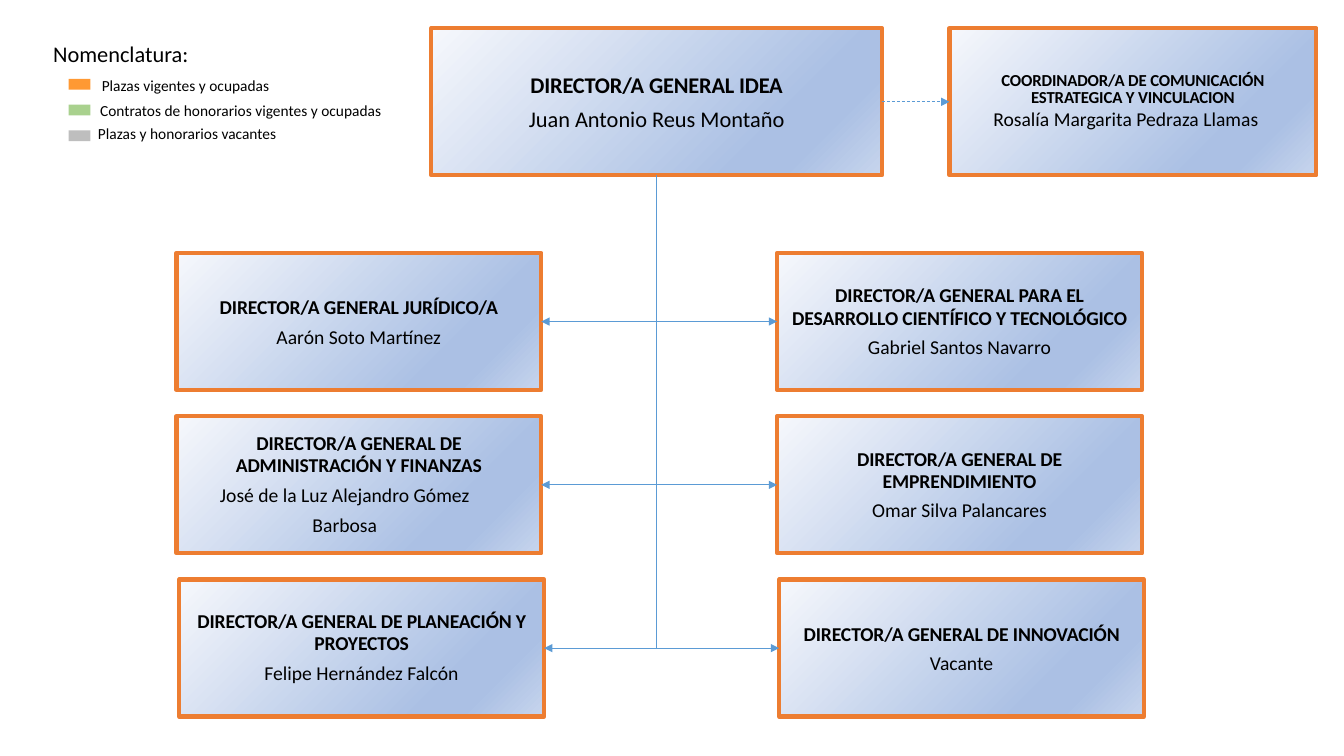
from dataclasses import dataclass
from typing import Any

from lxml.etree import SubElement as Sub
from pptx import Presentation
from pptx.dml.color import RGBColor as Rgb
from pptx.enum.dml import MSO_LINE as Dash
from pptx.enum.shapes import MSO_CONNECTOR as Link, MSO_SHAPE as Form
from pptx.enum.text import MSO_ANCHOR as Anchor, PP_ALIGN as Align
from pptx.oxml import parse_xml as to_xml
from pptx.oxml.ns import nsdecls, qn
from pptx.util import Pt

HUES = {
    "ink": "000000",
    "edge": "ED7D31",
    "link": "5B9BD5",
    "pale": "F6F8FC",
    "blue": "ABC0E4",
    "soft": "C7D5ED",
    "post": "FF9933",
    "fee": "A9D18E",
    "free": "BEBEBE",
}
STOPS = [(0, "pale"), (74, "blue"), (83, "blue"), (100, "soft")]
FONT = "Calibri"


@dataclass(frozen=True)
class Line:
    text: str
    size: float = 14
    bold: bool = False
    gap: float = 0
    lead: Any = None
    pad: float = 0


@dataclass(frozen=True)
class Box:
    left: float
    top: float
    width: float
    height: float
    lines: tuple[Line, ...]


@dataclass(frozen=True)
class Key:
    hue: str
    text: str
    left: float
    top: float
    width: float


def hue(name: str) -> Rgb:
    return Rgb.from_string(HUES[name])


def write(para: Any, line: Line) -> None:
    para.space_before = Pt(line.gap)
    if line.lead:
        para.line_spacing = line.lead
    if line.pad:
        props = para._p.get_or_add_pPr()
        props.set("marL", str(Pt(line.pad)))
        props.set("marR", str(Pt(line.pad)))
    run = para.add_run()
    run.text = line.text
    font = run.font
    font.name, font.size, font.bold = FONT, Pt(line.size), line.bold
    font.color.rgb = hue("ink")
    if line.bold:
        font._element.set("spc", "-10")


def draw_box(shapes: Any, box: Box) -> Any:
    rect = shapes.add_shape(Form.RECTANGLE, Pt(box.left), Pt(box.top),
                            Pt(box.width), Pt(box.height))
    rect.shadow.inherit = False
    stops = "".join(f'<a:gs pos="{at * 1000}"><a:srgbClr val="{HUES[name]}"/></a:gs>'
                    for at, name in STOPS)
    blend = to_xml(f'<a:gradFill {nsdecls("a")} rotWithShape="1"><a:gsLst>{stops}'
                   '</a:gsLst><a:lin ang="2700000" scaled="0"/></a:gradFill>')
    rect._element.spPr.insert(2, blend)
    rect.line.color.rgb = hue("edge")
    rect.line.width = Pt(3)
    frame = rect.text_frame
    frame.word_wrap = True
    frame.vertical_anchor = Anchor.MIDDLE
    for i, line in enumerate(box.lines):
        para = frame.add_paragraph() if i else frame.paragraphs[0]
        para.alignment = Align.CENTER
        write(para, line)
    return rect


def draw_note(shapes: Any, line: Line, left: float, top: float,
              width: float, height: float) -> None:
    frame = shapes.add_textbox(Pt(left), Pt(top), Pt(width), Pt(height)).text_frame
    frame.word_wrap = True
    frame.margin_left = frame.margin_right = frame.margin_bottom = 0
    frame.margin_top = Pt(1)
    write(frame.paragraphs[0], line)


def draw_key(shapes: Any, key: Key, top: float) -> None:
    chip = shapes.add_shape(Form.RECTANGLE, Pt(49), Pt(top), Pt(15.5), Pt(7.7))
    chip.shadow.inherit = False
    chip.fill.solid()
    chip.fill.fore_color.rgb = hue(key.hue)
    chip.line.fill.background()
    draw_note(shapes, Line(key.text, 11, gap=1.1), key.left, key.top, key.width, 14.4)


def draw_link(shapes: Any, x1: float, y1: float, x2: float, y2: float,
              heads: tuple[str, ...] = (), dash: bool = False) -> Any:
    link = shapes.add_connector(Link.STRAIGHT, Pt(x1), Pt(y1), Pt(x2), Pt(y2))
    link.line.color.rgb = hue("link")
    link.line.width = Pt(0.5)
    if dash:
        link.line.dash_style = Dash.DASH
    stroke = link.line._get_or_add_ln()
    for head in heads:
        Sub(stroke, qn(head)).set("type", "triangle")
    Sub(link._element.spPr, qn("a:effectLst"))
    return link


def join(shapes: Any, start: Any, end: Any, heads: tuple[str, ...],
         dash: bool = False) -> None:
    link = draw_link(shapes, 0, 0, 0, 0, heads, dash)
    link.begin_connect(start, 3)
    link.end_connect(end, 1)


def head(text: str, gap: float, lead: float = 0, pad: float = 0) -> Line:
    return Line(text, 14, True, gap, Pt(lead) if lead else None, pad)


BOSS = Box(308.16, 20.16, 321.84, 105.12, (
    Line("DIRECTOR/A GENERAL IDEA", 16, True, 6.4),
    Line("Juan Antonio Reus Montaño", 16, gap=0.1, lead=1.25)))
AIDE = Box(678.24, 20.16, 262.08, 105.12, (
    Line("COORDINADOR/A DE COMUNICACIÓN ESTRATEGICA Y VINCULACION",
         12, True, 2.5, Pt(11.9), 10),
    Line("Rosalía Margarita Pedraza Llamas", gap=0.6, lead=Pt(16.6))))

ROWS = [
    (126, 555.12,
     (head("DIRECTOR/A GENERAL JURÍDICO/A", 5.2),
      Line("Aarón Soto Martínez", gap=4.2)),
     (head("DIRECTOR/A GENERAL PARA EL", 1.1, 15.9),
      head("DESARROLLO CIENTÍFICO Y TECNOLÓGICO", 0, 15.9),
      Line("Gabriel Santos Navarro", lead=1.25))),
    (126, 555.12,
     (head("DIRECTOR/A GENERAL DE ADMINISTRACIÓN Y FINANZAS", 2.9, 15.2, 20),
      Line("José de la Luz Alejandro Gómez Barbosa", gap=0.8, lead=Pt(21))),
     (head("DIRECTOR/A GENERAL DE", 1.1, 15.9),
      head("EMPRENDIMIENTO", 0, 15.9),
      Line("Omar Silva Palancares", lead=1.25))),
    (128, 556.56,
     (head("DIRECTOR/A GENERAL DE PLANEACIÓN Y PROYECTOS", 3, 15.1),
      Line("Felipe Hernández Falcón", gap=0.8, lead=Pt(21))),
     (head("DIRECTOR/A GENERAL DE INNOVACIÓN", 5.2),
      Line("Vacante", lead=1.25))),
]
TOP, STEP, WIDE, HIGH = 180.72, 116.64, 260.64, 97.92

KEYS = [
    Key("post", "Plazas vigentes y ocupadas", 72.7, 53.3, 130),
    Key("fee", "Contratos de honorarios vigentes y ocupadas", 71.5, 71.3, 212),
    Key("free", "Plazas y honorarios vacantes", 70, 87.8, 190),
]


def main() -> None:
    deck = Presentation()
    deck.slide_width, deck.slide_height = Pt(960), Pt(540)
    shapes = deck.slides.add_slide(deck.slide_layouts[6]).shapes

    draw_note(shapes, Line("Nomenclatura:", 16, gap=1.1), 38, 27.4, 125, 20)
    for i, key in enumerate(KEYS):
        draw_key(shapes, key, 56.3 + 18.4 * i)

    boss = draw_box(shapes, BOSS)
    aide = draw_box(shapes, AIDE)
    pairs = []
    for i, (west, east, left, right) in enumerate(ROWS):
        top = TOP + STEP * i
        pairs.append((draw_box(shapes, Box(west, top, WIDE, HIGH, left)),
                      draw_box(shapes, Box(east, top, WIDE, HIGH, right))))

    mid = BOSS.left + BOSS.width / 2
    foot = TOP + STEP * (len(ROWS) - 1) + HIGH / 2
    trunk = draw_link(shapes, mid, BOSS.top + BOSS.height, mid, foot)
    trunk.begin_connect(boss, 2)
    for left, right in pairs:
        join(shapes, left, right, ("a:headEnd", "a:tailEnd"))
    join(shapes, boss, aide, ("a:tailEnd",), True)

    deck.save("out.pptx")


if __name__ == "__main__":
    main()
